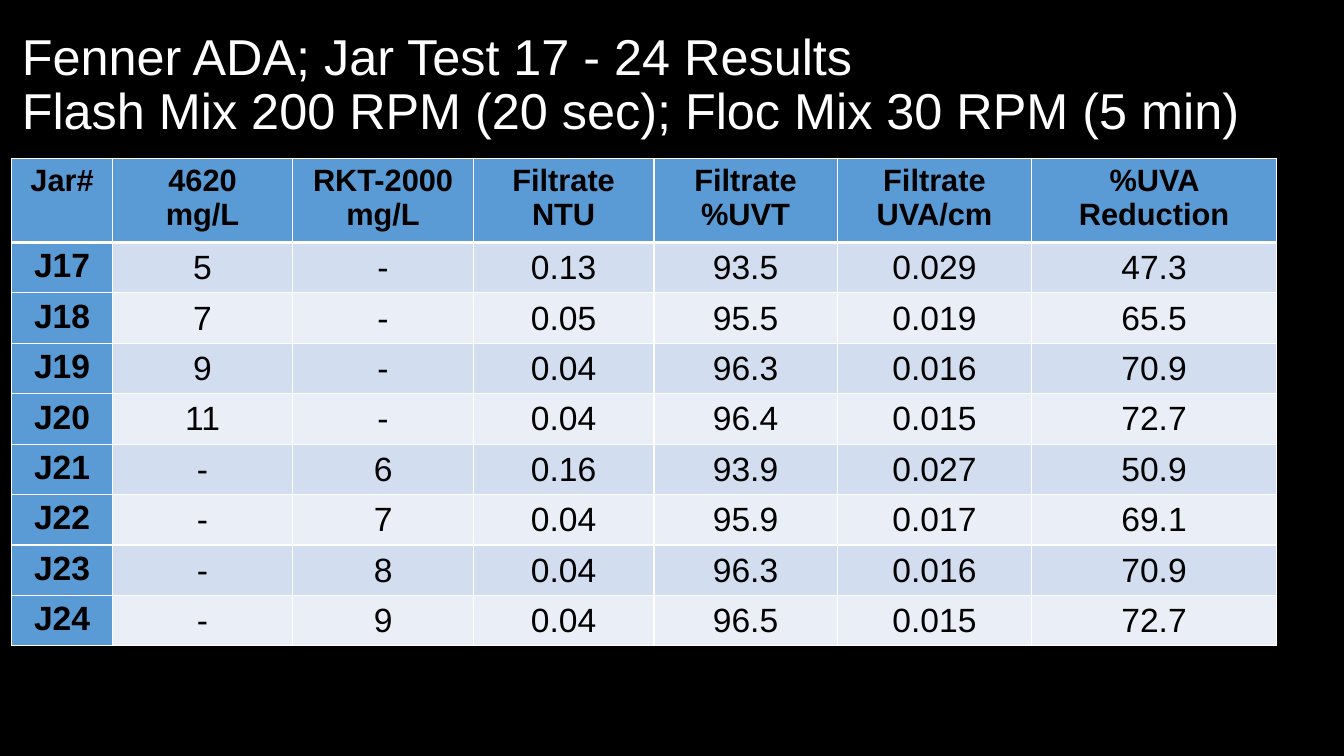
import dataclasses

import lxml.etree
import pptx
import pptx.dml.color
import pptx.enum.text
import pptx.oxml.ns
import pptx.util


@dataclasses.dataclass(frozen=True)
class Theme:
    font: str = "Arial"
    background: str = "000000"
    title_color: str = "FFFFFF"
    table_text: str = "000000"
    border: str = "FFFFFF"
    accent: str = "5B9BD5"
    bands: tuple = ("D2DEEF", "EAEFF7")
    title_size: int = 36
    header_size: int = 22
    body_size: int = 24
    thin_border: int = 1
    thick_border: int = 3


TITLE_LINES = (
    "Fenner ADA; Jar Test 17 - 24 Results",
    "Flash Mix 200 RPM (20 sec); Floc Mix 30 RPM (5 min)",
)
HEADERS = ("Jar#", "4620\nmg/L", "RKT-2000\nmg/L", "Filtrate\nNTU",
           "Filtrate\n%UVT", "Filtrate\nUVA/cm", "%UVA Reduction")
JAR_RESULTS = (
    ("J17", "5", "-", "0.13", "93.5", "0.029", "47.3"),
    ("J18", "7", "-", "0.05", "95.5", "0.019", "65.5"),
    ("J19", "9", "-", "0.04", "96.3", "0.016", "70.9"),
    ("J20", "11", "-", "0.04", "96.4", "0.015", "72.7"),
    ("J21", "-", "6", "0.16", "93.9", "0.027", "50.9"),
    ("J22", "-", "7", "0.04", "95.9", "0.017", "69.1"),
    ("J23", "-", "8", "0.04", "96.3", "0.016", "70.9"),
    ("J24", "-", "9", "0.04", "96.5", "0.015", "72.7"),
)
COLUMN_WIDTHS = (2.53, 4.55, 4.55, 4.55, 4.62, 4.9, 6.17)
HEADER_HEIGHT = 2.0
ROW_HEIGHT = 1.2


def rgb(color):
    return pptx.dml.color.RGBColor.from_string(color)


class SlideBuilder:
    def __init__(self, slide, theme):
        self.slide = slide
        self.theme = theme

    def background(self):
        fill = self.slide.background.fill
        fill.solid()
        fill.fore_color.rgb = rgb(self.theme.background)

    def style(self, paragraph, size, color, bold=False):
        font = paragraph.font
        font.name = self.theme.font
        font.size = pptx.util.Pt(size)
        font.bold = bold
        font.color.rgb = rgb(color)

    def title(self, lines, left, top, width, height):
        cm = pptx.util.Cm
        box = self.slide.shapes.add_textbox(cm(left), cm(top), cm(width), cm(height))
        frame = box.text_frame
        frame.word_wrap = True
        frame.vertical_anchor = pptx.enum.text.MSO_ANCHOR.MIDDLE
        paragraph = frame.paragraphs[0]
        paragraph.text = "\v".join(lines)
        paragraph.line_spacing = 0.9
        self.style(paragraph, self.theme.title_size, self.theme.title_color)

    def borders(self, cell, top, bottom):
        properties = cell._tc.get_or_add_tcPr()
        thin = self.theme.thin_border
        for side, points in (("L", thin), ("R", thin), ("T", top), ("B", bottom)):
            line = lxml.etree.SubElement(properties, pptx.oxml.ns.qn(f"a:ln{side}"),
                                         w=str(pptx.util.Pt(points)))
            solid = lxml.etree.SubElement(line, pptx.oxml.ns.qn("a:solidFill"))
            lxml.etree.SubElement(solid, pptx.oxml.ns.qn("a:srgbClr"),
                                  val=self.theme.border)

    def cell(self, cell, text, row, column):
        theme = self.theme
        is_header, is_label = row == 0, column == 0
        heading = is_header or is_label

        # Borders and fill: a thick rule separates the header from the body
        self.borders(cell,
                     top=theme.thick_border if row == 1 else theme.thin_border,
                     bottom=theme.thick_border if is_header else theme.thin_border)
        cell.fill.solid()
        cell.fill.fore_color.rgb = rgb(
            theme.accent if heading else theme.bands[(row - 1) % 2])

        # Values are centred vertically with tight margins
        if not heading:
            cell.vertical_anchor = pptx.enum.text.MSO_ANCHOR.MIDDLE
            cell.margin_left = cell.margin_right = cell.margin_top = pptx.util.Cm(0.02)
            cell.margin_bottom = 0

        cell.text_frame.text = text
        size = theme.header_size if is_header else theme.body_size
        for paragraph in cell.text_frame.paragraphs:
            paragraph.alignment = pptx.enum.text.PP_ALIGN.CENTER
            self.style(paragraph, size, theme.table_text, bold=heading)

    def table(self, rows, widths, left, top):
        cm = pptx.util.Cm
        height = HEADER_HEIGHT + ROW_HEIGHT * (len(rows) - 1)
        table = self.slide.shapes.add_table(
            len(rows), len(widths), cm(left), cm(top), cm(sum(widths)), cm(height)).table
        table.first_col = True
        for column, width in zip(table.columns, widths):
            column.width = cm(width)
        for row_index, values in enumerate(rows):
            table.rows[row_index].height = cm(ROW_HEIGHT if row_index else HEADER_HEIGHT)
            for column_index, text in enumerate(values):
                self.cell(table.cell(row_index, column_index), text,
                          row_index, column_index)


def main():
    deck = pptx.Presentation()
    deck.slide_width = pptx.util.Cm(33.87)
    deck.slide_height = pptx.util.Cm(19.05)
    slide = deck.slides.add_slide(deck.slide_layouts[6])
    builder = SlideBuilder(slide, Theme())

    # Black page with a two-line title
    builder.background()
    builder.title(TITLE_LINES, left=0.3, top=0.33, width=33.1, height=3.68)

    # Jar test results
    builder.table((HEADERS, *JAR_RESULTS), COLUMN_WIDTHS, left=0.3, top=3.99)

    deck.save("out.pptx")


if __name__ == "__main__":
    main()
